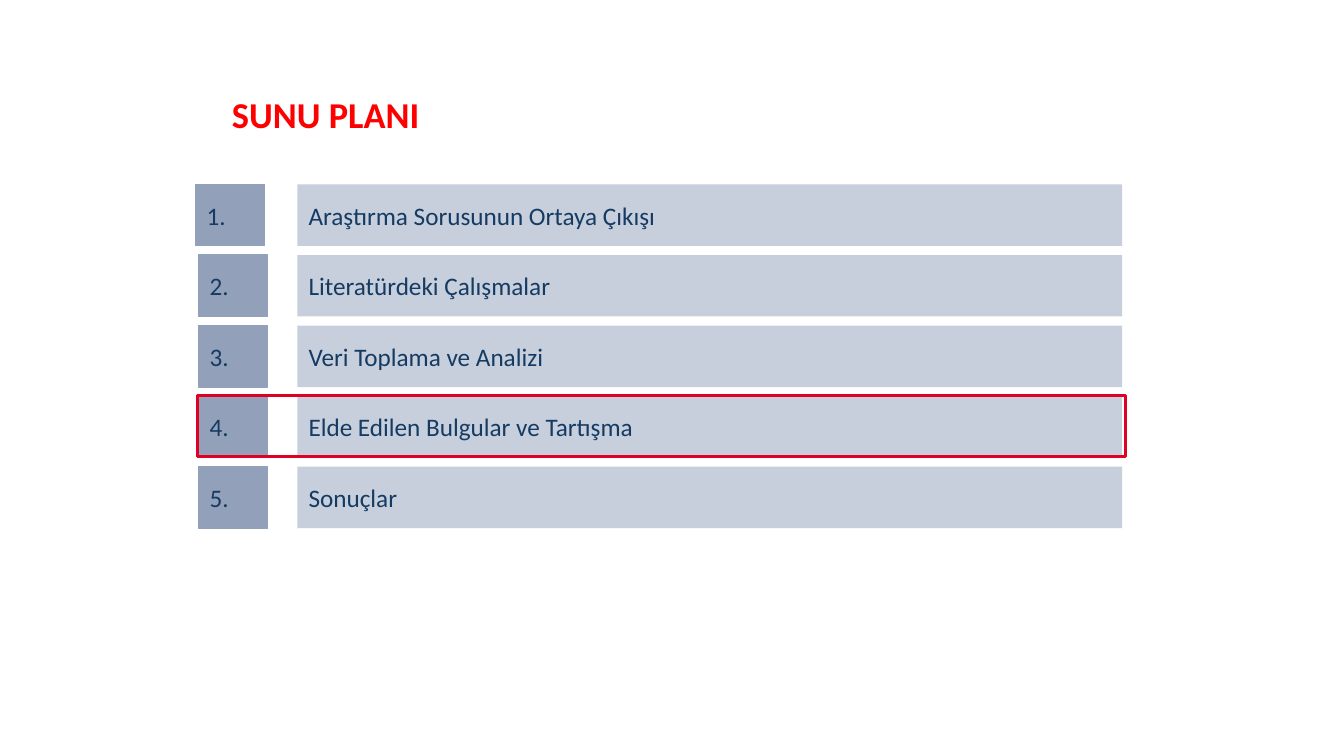
from dataclasses import dataclass

from pptx import Presentation
from pptx.dml.color import RGBColor
from pptx.enum.shapes import MSO_SHAPE as Shape
from pptx.enum.text import MSO_ANCHOR as Anchor, MSO_AUTO_SIZE as AutoSize, PP_ALIGN as Align
from pptx.util import Inches, Pt


@dataclass(frozen=True)
class Theme:
    """Colours, font and type sizes of the deck."""
    font: str = "Calibri"
    title_size: int = 26
    body_size: int = 18
    title: str = "FF0000"
    text: str = "153B63"
    number_fill: str = "92A0B9"
    topic_fill: str = "C7CFDC"
    highlight: str = "DF0024"


THEME = Theme()
TOPICS = [
    "Araştırma Sorusunun Ortaya Çıkışı",
    "Literatürdeki Çalışmalar",
    "Veri Toplama ve Analizi",
    "Elde Edilen Bulgular ve Tartışma",
    "Sonuçlar",
]
CURRENT_TOPIC = 3


def write(shape, text, *, size=THEME.body_size, color=THEME.text, bold=False,
          anchor=Anchor.MIDDLE, margins=(0.11, 0.05, 0.11, 0.05), spacing=None):
    """Put one left-aligned line of formatted text in a shape."""
    frame = shape.text_frame
    frame.word_wrap = True
    frame.auto_size = AutoSize.NONE
    frame.vertical_anchor = anchor
    (frame.margin_left, frame.margin_top,
     frame.margin_right, frame.margin_bottom) = map(Inches, margins)
    para = frame.paragraphs[0]
    para.alignment = Align.LEFT
    para.line_spacing = spacing
    span = para.add_run()
    span.text = text
    span.font.name = THEME.font
    span.font.size = Pt(size)
    span.font.bold = bold
    span.font.color.rgb = RGBColor.from_string(color)


def add_bar(page, box, *, fill=None, line=None, line_width=0.75):
    """Draw a rectangle with an optional fill and outline."""
    bar = page.shapes.add_shape(Shape.RECTANGLE, *map(Inches, box))
    bar.shadow.inherit = False
    if fill:
        bar.fill.solid()
        bar.fill.fore_color.rgb = RGBColor.from_string(fill)
    else:
        bar.fill.background()
    if line:
        bar.line.color.rgb = RGBColor.from_string(line)
        bar.line.width = Pt(line_width)
    else:
        bar.line.fill.background()
    return bar


def add_title(page, box, text):
    """Place the slide title in its placeholder."""
    title = page.shapes.title
    title.left, title.top, title.width, title.height = map(Inches, box)
    write(title, text, size=THEME.title_size, color=THEME.title, bold=True,
          anchor=Anchor.TOP, margins=(0, 0.01, 0, 0), spacing=1.11)


def add_agenda(page, box, topics, current):
    """Stack numbered topic rows in a box and outline the current one."""
    left, top, width, height = box
    bar_height, number_width, topic_offset = 0.61, 0.68, 0.98
    pitch = (height - bar_height) / (len(topics) - 1)
    for index, topic in enumerate(topics):
        row_top = top + index * pitch
        number_left = left if index else left - 0.03
        number = add_bar(page, (number_left, row_top, number_width, bar_height),
                         fill=THEME.number_fill, line=THEME.number_fill)
        write(number, f"{index + 1}.")
        label = add_bar(page, (left + topic_offset, row_top, width - topic_offset, bar_height),
                        fill=THEME.topic_fill)
        write(label, topic)
    add_bar(page, (left - 0.01, top + current * pitch - 0.01, width + 0.04, bar_height),
            line=THEME.highlight, line_width=2.25)


def main():
    """Build the agenda slide and save the deck."""
    deck = Presentation()
    deck.slide_width, deck.slide_height = Inches(13.33), Inches(7.5)
    page = deck.slides.add_slide(deck.slide_layouts.get_by_name("Title Only"))
    add_title(page, (2.3, 0.86, 8.57, 0.65), "SUNU PLANI")
    add_agenda(page, (1.97, 1.83, 9.16, 3.41), TOPICS, CURRENT_TOPIC)
    deck.save("out.pptx")


if __name__ == "__main__":
    main()
